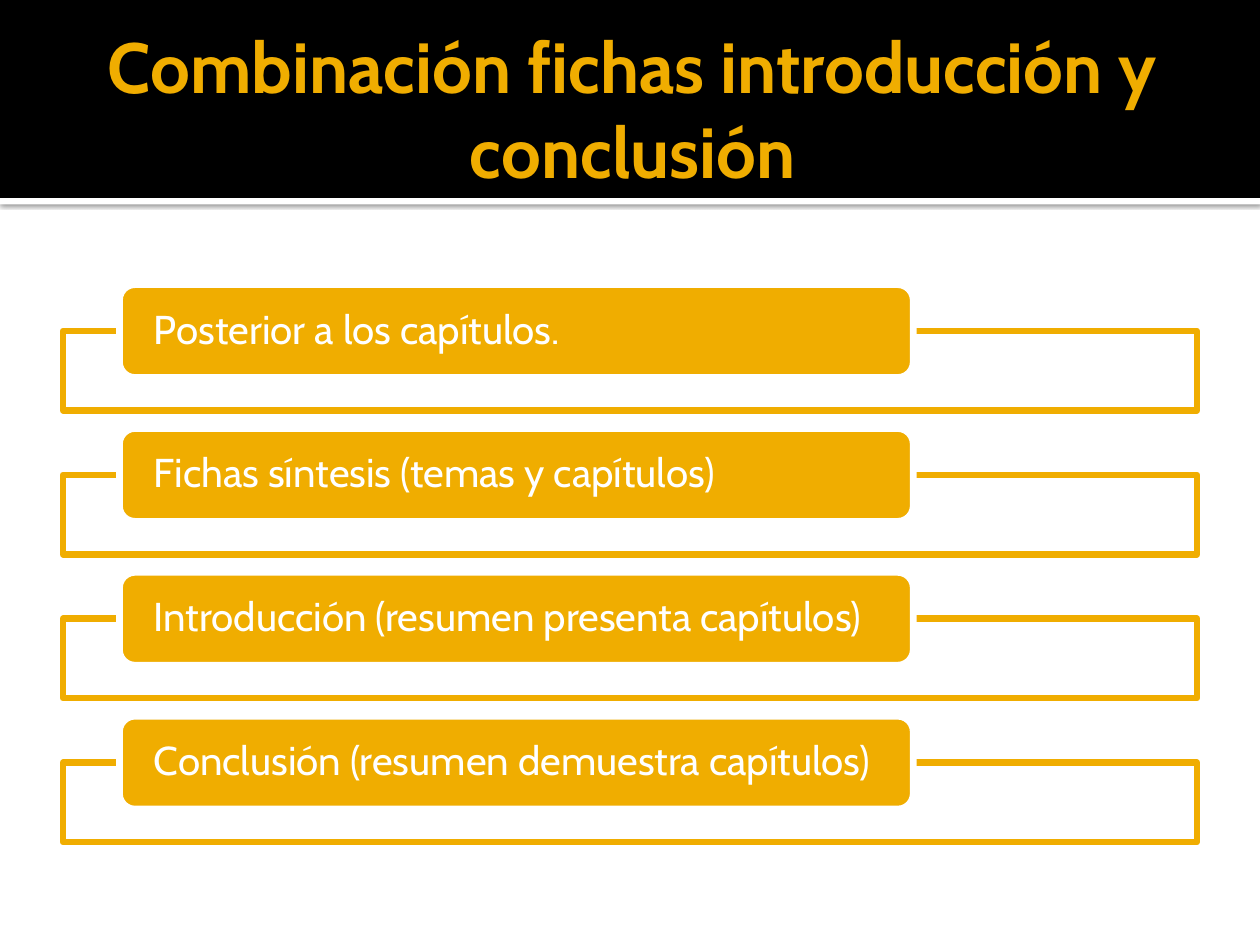
import pptx
import pptx.util
import pptx.dml.color
import pptx.enum.shapes
import pptx.enum.text
import pptx.oxml
import pptx.oxml.ns
from pptx.util import Cm, Pt

HEADING = "Combinación fichas introducción y conclusión"
STEPS = [
    "Posterior a los capítulos.",
    "Fichas síntesis (temas y capítulos)",
    "Introducción (resumen presenta capítulos)",
    "Conclusión (resumen demuestra capítulos)",
]

AMBER, WHITE, BLACK = "F0AD00", "FFFFFF", "000000"
FONT = "Cabin"
SLIDE_WIDTH, SLIDE_HEIGHT = 25.4, 19.05
HEADER_HEIGHT = 3.99
FIRST_TOP, PITCH = 5.74, 2.9
PILL_LEFT, PILL_WIDTH, PILL_HEIGHT = 2.41, 16, 1.87
FRAME_LEFT, FRAME_WIDTH, FRAME_HEIGHT = 1.27, 22.86, 1.6
BORDER = 3.78

HEADING_FRAME = {
    "margin_left": Cm(0.25), "margin_right": Cm(0.13),
    "margin_top": Cm(0.13), "margin_bottom": Cm(0.13),
}
STEP_FRAME = {
    "margin_left": Cm(0.6), "margin_right": Cm(0.3),
    "margin_top": 0, "margin_bottom": 0,
}
COMMON_FRAME = {
    "word_wrap": True,
    "auto_size": pptx.enum.text.MSO_AUTO_SIZE.NONE,
    "vertical_anchor": pptx.enum.text.MSO_ANCHOR.MIDDLE,
}
HEADING_FONT = {"name": FONT, "size": Pt(40.5), "bold": True}
STEP_FONT = {"name": FONT, "size": Pt(23), "bold": False}
SHADOW = (
    '<a:outerShdw {ns} blurRad="{blur}" dist="{dist}" dir="5400000" rotWithShape="0">'
    '<a:srgbClr val="000000"><a:alpha val="60000"/></a:srgbClr></a:outerShdw>'
)


def rgb(code):
    return pptx.dml.color.RGBColor.from_string(code)


def apply(target, values):
    for name, value in values.items():
        setattr(target, name, value)


def add_box(slide, kind, place, fill, line=None):
    box = slide.shapes.add_shape(kind, *[Cm(length) for length in place])
    box.shadow.inherit = False
    box.fill.solid()
    box.fill.fore_color.rgb = rgb(fill)
    if line:
        box.line.color.rgb = rgb(line)
        box.line.width = Pt(BORDER)
    else:
        box.line.fill.background()
    return box


def write(shape, text, frame_format, font_format, color, align):
    frame = shape.text_frame
    apply(frame, COMMON_FRAME | frame_format)
    paragraph = frame.paragraphs[0]
    paragraph.alignment = align
    run = paragraph.add_run()
    run.text = text
    apply(run.font, font_format)
    run.font.color.rgb = rgb(color)
    return paragraph


def add_header(slide):
    rect = pptx.enum.shapes.MSO_SHAPE.RECTANGLE
    strip = add_box(slide, rect, (0, HEADER_HEIGHT, SLIDE_WIDTH, 0.13), WHITE)
    effects = strip._element.spPr.find(pptx.oxml.ns.qn("a:effectLst"))
    effects.append(pptx.oxml.parse_xml(SHADOW.format(
        ns=pptx.oxml.ns.nsdecls("a"), blur=Pt(2.5), dist=Pt(0.8))))
    add_box(slide, rect, (0, 0, SLIDE_WIDTH, HEADER_HEIGHT), BLACK)

    heading = slide.shapes.title
    slide.shapes._spTree.append(heading._element)  # in front of the band
    apply(heading, {"left": Cm(1.27), "top": Cm(0.43),
                    "width": Cm(22.86), "height": Cm(3.48)})
    write(heading, HEADING, HEADING_FRAME, HEADING_FONT, AMBER,
          pptx.enum.text.PP_ALIGN.CENTER)


def add_step(slide, text, top):
    shapes = pptx.enum.shapes.MSO_SHAPE
    add_box(slide, shapes.RECTANGLE,
            (FRAME_LEFT, top + PILL_HEIGHT / 2, FRAME_WIDTH, FRAME_HEIGHT),
            WHITE, AMBER)
    pill = add_box(slide, shapes.ROUNDED_RECTANGLE,
                   (PILL_LEFT, top, PILL_WIDTH, PILL_HEIGHT), AMBER, WHITE)
    paragraph = write(pill, text, STEP_FRAME, STEP_FONT, WHITE,
                      pptx.enum.text.PP_ALIGN.LEFT)
    paragraph.line_spacing = 0.9


def main():
    deck = pptx.Presentation()
    deck.slide_width, deck.slide_height = Cm(SLIDE_WIDTH), Cm(SLIDE_HEIGHT)
    slide = deck.slides.add_slide(deck.slide_layouts.get_by_name("Title Only"))
    add_header(slide)
    for row, text in enumerate(STEPS):
        add_step(slide, text, FIRST_TOP + row * PITCH)
    deck.save("out.pptx")


if __name__ == "__main__":
    main()
